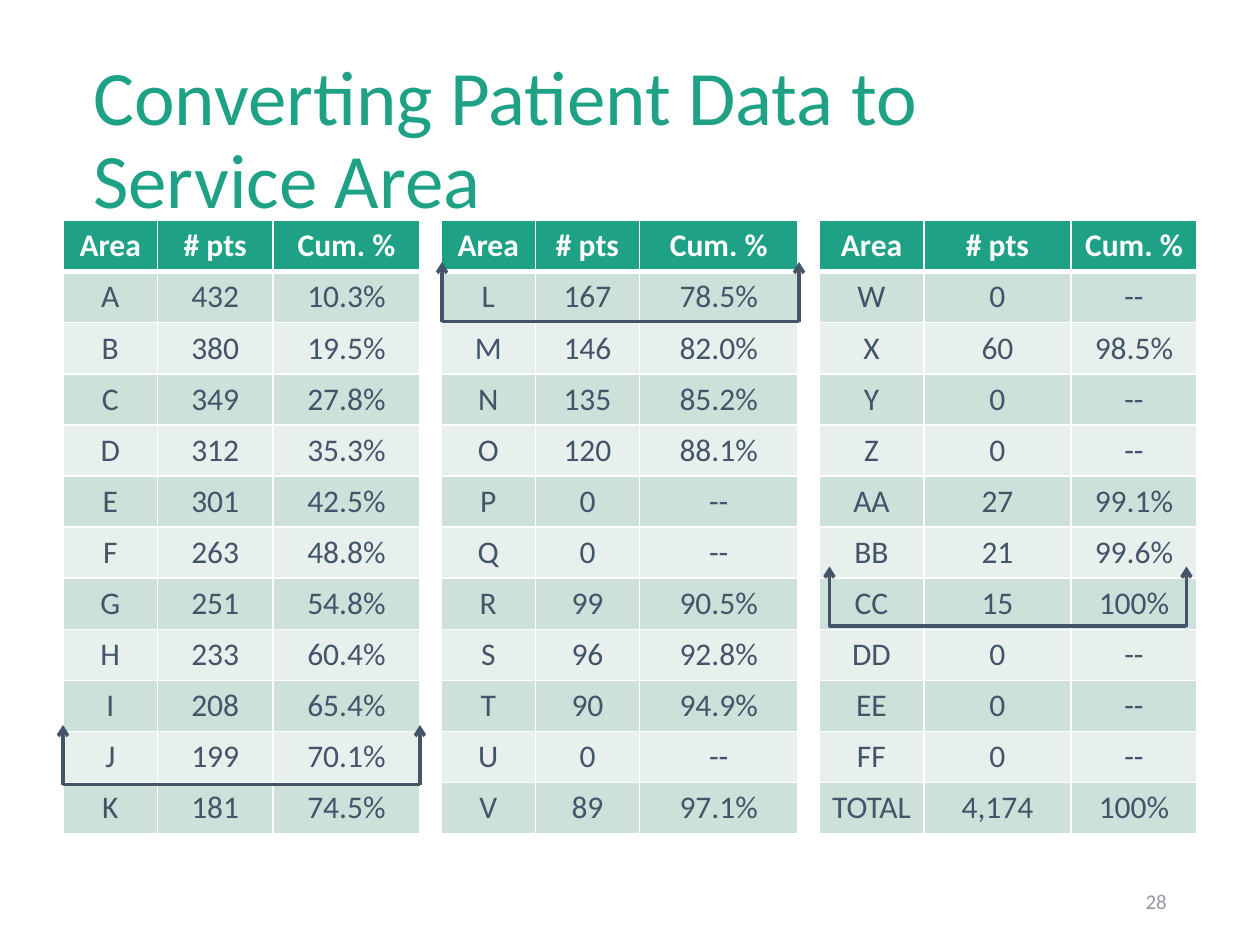
from lxml.etree import SubElement
from pptx import Presentation
from pptx.dml.color import RGBColor
from pptx.enum.shapes import MSO_CONNECTOR as Line
from pptx.enum.text import MSO_ANCHOR as Anchor, PP_ALIGN as Align
from pptx.oxml.ns import qn
from pptx.util import Inches, Pt

FONT = "Calibri"
GREEN, SLATE, GREY, WHITE = "1EA185", "445469", "9499A1", "FFFFFF"
BANDS = ("CDE0D9", "E8F0ED")

# Grid: 120 columns by 90 rows, each one twelfth of an inch
TABLE_TOP, ROW_H = 21, 4.87
BRACKET_W, ARM_H = 34, 5.75
HEADER = ("Area", "# pts", "Cum. %")

# Left edge, column widths, rows
TABLES = (
    (6, (9, 11, 14), (
        ("A", "432", "10.3%"), ("B", "380", "19.5%"), ("C", "349", "27.8%"),
        ("D", "312", "35.3%"), ("E", "301", "42.5%"), ("F", "263", "48.8%"),
        ("G", "251", "54.8%"), ("H", "233", "60.4%"), ("I", "208", "65.4%"),
        ("J", "199", "70.1%"), ("K", "181", "74.5%"))),
    (42, (9, 9.9, 15.1), (
        ("L", "167", "78.5%"), ("M", "146", "82.0%"), ("N", "135", "85.2%"),
        ("O", "120", "88.1%"), ("P", "0", "--"), ("Q", "0", "--"),
        ("R", "99", "90.5%"), ("S", "96", "92.8%"), ("T", "90", "94.9%"),
        ("U", "0", "--"), ("V", "89", "97.1%"))),
    (78, (10, 14, 12), (
        ("W", "0", "--"), ("X", "60", "98.5%"), ("Y", "0", "--"),
        ("Z", "0", "--"), ("AA", "27", "99.1%"), ("BB", "21", "99.6%"),
        ("CC", "15", "100%"), ("DD", "0", "--"), ("EE", "0", "--"),
        ("FF", "0", "--"), ("TOTAL", "4,174", "100%"))),
)
# Left edge and baseline of the threshold brackets
BRACKETS = ((6, 74.7), (42.1, 30.6), (79, 59.6))


def grid(n):
    return Inches(n / 12)


def color(hex_text):
    return RGBColor.from_string(hex_text)


def add_run(p, text, size, hex_text, bold=False):
    r = p.add_run()
    r.text = text
    r.font.name, r.font.size, r.font.bold = FONT, Pt(size), bold
    r.font.color.rgb = color(hex_text)


def add_text(s, box, lines, size, hex_text, align=Align.LEFT, spacing=1.0):
    sp = s.shapes.add_textbox(*map(Inches, box))
    tf = sp.text_frame
    tf.word_wrap = True
    tf.vertical_anchor = Anchor.MIDDLE
    tf.margin_left = tf.margin_right = Inches(0.05)
    tf.margin_top = tf.margin_bottom = Inches(0.03)
    p = tf.paragraphs[0]
    p.alignment, p.line_spacing = align, spacing
    for i, line in enumerate(lines):
        if i:
            p.add_line_break()
        add_run(p, line, size, hex_text)


def set_borders(cell, top, bottom):
    tc_pr = cell._tc.get_or_add_tcPr()
    for side, width in (("L", 1), ("R", 1), ("T", top), ("B", bottom)):
        ln = SubElement(tc_pr, qn(f"a:ln{side}"), w=str(Pt(width)))
        fill = SubElement(ln, qn("a:solidFill"))
        SubElement(fill, qn("a:srgbClr"), val=WHITE)


def fill_cell(cell, text, row):
    head = row == 0
    set_borders(cell, 3 if row == 1 else 1, 3 if head else 1)
    cell.fill.solid()
    cell.fill.fore_color.rgb = color(GREEN if head else BANDS[(row - 1) % 2])
    p = cell.text_frame.paragraphs[0]
    p.alignment = Align.CENTER
    add_run(p, text, 18, WHITE if head else SLATE, head)


def add_area_table(s, left, widths, rows):
    rows = (HEADER, *rows)
    table = s.shapes.add_table(
        len(rows), len(widths), grid(left), grid(TABLE_TOP),
        grid(sum(widths)), grid(ROW_H * len(rows))).table
    for column, width in zip(table.columns, widths):
        column.width = grid(width)
    for i, row in enumerate(rows):
        table.rows[i].height = grid(ROW_H)
        for j, text in enumerate(row):
            fill_cell(table.cell(i, j), text, i)


def add_line(shapes, x1, y1, x2, y2, arrow=False):
    line = shapes.add_connector(Line.STRAIGHT, *map(grid, (x1, y1, x2, y2)))
    line.line.color.rgb = color(SLATE)
    line.line.width = Pt(2)
    if arrow:
        SubElement(line.line._get_or_add_ln(), qn("a:tailEnd"), type="arrow")
    SubElement(line._element.spPr, qn("a:effectLst"))


def add_bracket(s, left, base):
    shapes = s.shapes.add_group_shape().shapes
    right = left + BRACKET_W
    add_line(shapes, left, base, right, base)
    for x in (left, right):
        add_line(shapes, x, base + 0.1, x, base + 0.1 - ARM_H, arrow=True)


def main():
    prs = Presentation()
    prs.slide_width, prs.slide_height = Inches(10), Inches(7.5)
    s = prs.slides.add_slide(prs.slide_layouts[6])

    # Title
    add_text(s, (0.69, 0.4, 8.62, 1.45),
             ("Converting Patient Data to ", "Service Area"),
             44, GREEN, spacing=0.9)

    # Patient counts by area
    for left, widths, rows in TABLES:
        add_area_table(s, left, widths, rows)

    # Service area thresholds
    for left, base in BRACKETS:
        add_bracket(s, left, base)

    # Page number
    add_text(s, (7.06, 6.95, 2.25, 0.4), ("28",), 12, GREY, Align.RIGHT)

    prs.save("out.pptx")


if __name__ == "__main__":
    main()
